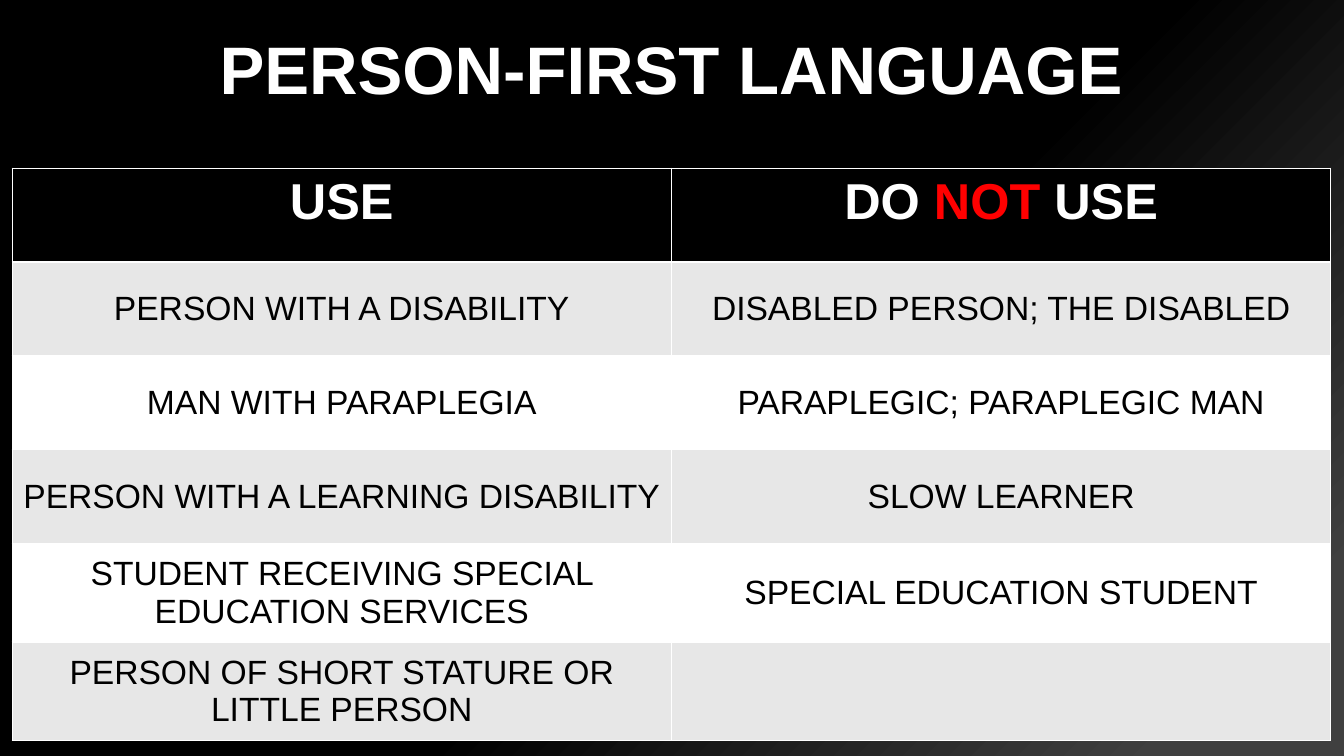
from lxml import etree
from pptx import Presentation
from pptx import util as u
from pptx.dml.color import RGBColor
from pptx.enum import text
from pptx.oxml.ns import qn

TITLE = "PERSON-FIRST LANGUAGE"
HEADER = [
    [("USE", "FFFFFF")],
    [("DO ", "FFFFFF"), ("NOT", "FF0000"), (" USE", "FFFFFF")],
]
TERMS = [
    ("PERSON WITH A DISABILITY", "DISABLED PERSON; THE DISABLED"),
    ("MAN WITH PARAPLEGIA", "PARAPLEGIC; PARAPLEGIC MAN"),
    ("PERSON WITH A LEARNING DISABILITY", "SLOW LEARNER"),
    ("STUDENT RECEIVING SPECIAL EDUCATION SERVICES", "SPECIAL EDUCATION STUDENT"),
    ("PERSON OF SHORT STATURE OR LITTLE PERSON", ""),
]
ROW_HEIGHTS = [0.93] * 4 + [0.98] * 2
COL_WIDTH = 6.54
BANDS = ["E7E7E7", "FFFFFF"]
BACKGROUND = [(0.56, "000000"), (0.91, "404040")]


def color(hex_value):
    return RGBColor.from_string(hex_value)


def write(p, runs, size, bold):
    p.alignment = text.PP_ALIGN.CENTER
    p.font.name = "Arial"
    p.font.size = u.Pt(size)
    p.font.bold = bold
    for words, hex_value in runs:
        r = p.add_run()
        r.text = words
        r.font.color.rgb = color(hex_value)


def style_cell(cell, fill):
    tc_pr = cell._tc.get_or_add_tcPr()
    for side in ("lnL", "lnR", "lnT", "lnB"):
        ln = etree.SubElement(tc_pr, qn("a:" + side), w=str(u.Pt(1)))
        solid = etree.SubElement(ln, qn("a:solidFill"))
        etree.SubElement(solid, qn("a:srgbClr"), val="FFFFFF")
    cell.fill.solid()
    cell.fill.fore_color.rgb = color(fill)


def main():
    prs = Presentation()
    prs.slide_width, prs.slide_height = u.Inches(13.33), u.Inches(7.5)
    s = prs.slides.add_slide(prs.slide_layouts[6])

    bg = s.background.fill
    bg.gradient()
    bg.gradient_angle = 315
    for stop, (position, hex_value) in zip(bg.gradient_stops, BACKGROUND):
        stop.position = position
        stop.color.rgb = color(hex_value)

    title = s.shapes.add_textbox(u.Inches(1), 0, u.Inches(11.32), u.Inches(1.45))
    tf = title.text_frame
    tf.word_wrap = True
    tf.vertical_anchor = text.MSO_ANCHOR.MIDDLE
    tf.paragraphs[0].line_spacing = 0.9
    write(tf.paragraphs[0], [(TITLE, "FFFFFF")], 48, True)

    table = s.shapes.add_table(
        len(ROW_HEIGHTS), len(HEADER), u.Inches(0.12), u.Inches(1.67),
        u.Inches(COL_WIDTH * len(HEADER)), u.Inches(sum(ROW_HEIGHTS))).table
    for column in table.columns:
        column.width = u.Inches(COL_WIDTH)
    for row, height in zip(table.rows, ROW_HEIGHTS):
        row.height = u.Inches(height)

    for cell, runs in zip(table.rows[0].cells, HEADER):
        style_cell(cell, "000000")
        write(cell.text_frame.paragraphs[0], runs, 36, True)
    for i, terms in enumerate(TERMS):
        for cell, term in zip(table.rows[i + 1].cells, terms):
            style_cell(cell, BANDS[i % 2])
            cell.vertical_anchor = text.MSO_ANCHOR.MIDDLE
            runs = [(term, "000000")] if term else []
            write(cell.text_frame.paragraphs[0], runs, 24, False)

    prs.save("out.pptx")


if __name__ == "__main__":
    main()
